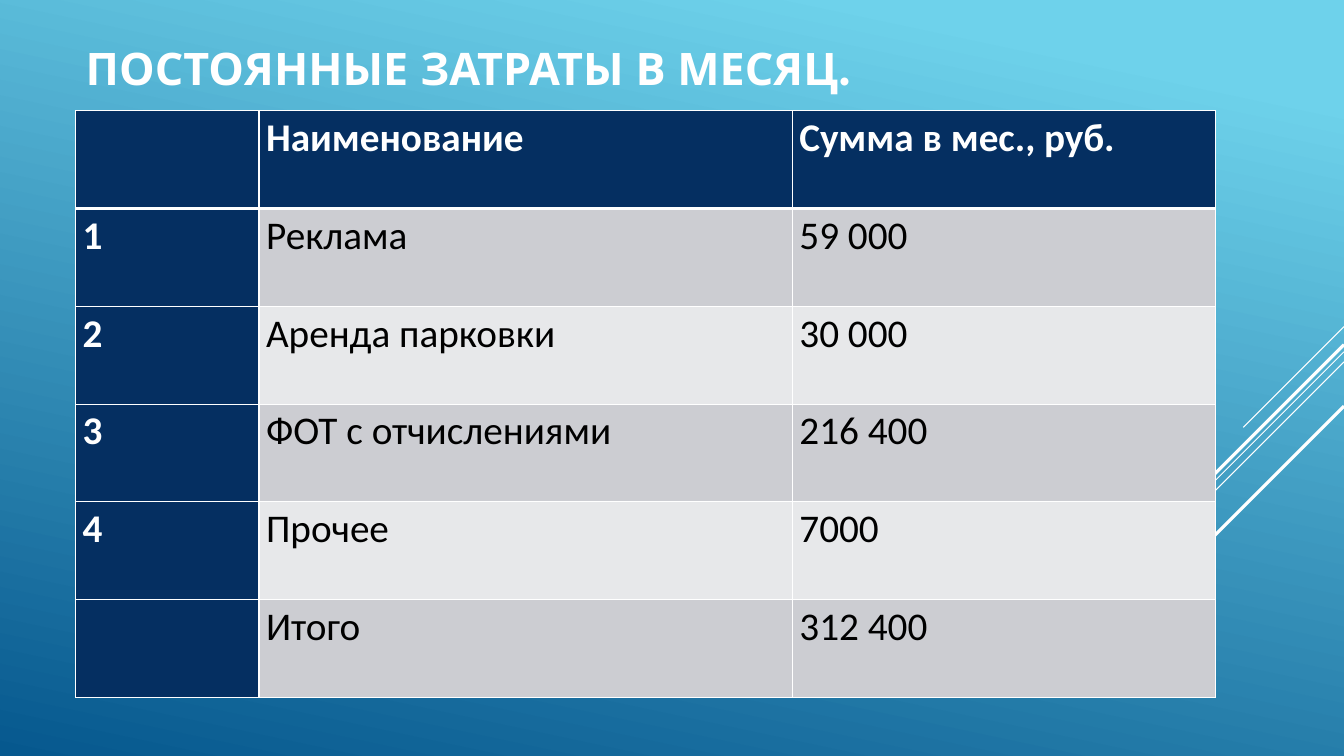
from lxml import etree
from pptx import Presentation
from pptx import util as u
from pptx.dml.color import RGBColor
from pptx.enum import shapes, text
from pptx.oxml.ns import qn

TITLE = "ПОСТОЯННЫЕ ЗАТРАТЫ В МЕСЯЦ."
COSTS = [
    ("", "Наименование", "Сумма в мес., руб."),
    ("1", "Реклама", "59 000"),
    ("2", "Аренда парковки", "30 000"),
    ("3", "ФОТ с отчислениями", "216 400"),
    ("4", "Прочее", "7000"),
    ("", "Итого", "312 400"),
]
# Diagonals at 45 degrees: height on the right edge, run to the left, width in points
DIAGONALS = [(3.24, 1, 0.75), (3.49, 3.26, 0.75), (3.59, 2.07, 0.75),
             (3.42, 1.91, 2.25), (4.03, 1.39, 2.25)]

WIDTH, HEIGHT = 13.33, 7.5
LEFT, TABLE_TOP, ROW_HEIGHT = 0.75, 1.1, 0.97
COLUMN_WIDTHS = (1.82, 5.29, 4.2)
GRADIENT_ANGLE = 258  # counter-clockwise

WHITE = RGBColor(0xFF, 0xFF, 0xFF)
BLACK = RGBColor(0, 0, 0)
NAVY = RGBColor(0x05, 0x2F, 0x61)
BANDS = (RGBColor(0xE7, 0xE8, 0xEA), RGBColor(0xCC, 0xCD, 0xD2))
SKY = RGBColor(0x6E, 0xD2, 0xEB)
DEEP_BLUE = RGBColor(0x06, 0x58, 0x8E)


def write(frame, words, *, font, size, color, bold, line_spacing=1.0, space_after=0):
    paragraph = frame.paragraphs[0]
    paragraph.alignment = text.PP_ALIGN.LEFT
    paragraph.line_spacing = line_spacing
    paragraph.space_after = u.Pt(space_after)
    run = paragraph.add_run()
    run.text = words
    run.font.name, run.font.size, run.font.bold = font, u.Pt(size), bold
    run.font.color.rgb = color


def set_borders(cell, **widths):
    """Give the cell white borders; widths in points by side: L, R, T, B."""
    properties = cell._tc.get_or_add_tcPr()
    for side, width in widths.items():
        line = etree.SubElement(properties, qn(f"a:ln{side}"), w=str(u.Pt(width)))
        fill = etree.SubElement(line, qn("a:solidFill"))
        etree.SubElement(fill, qn("a:srgbClr"), val=str(WHITE))


def paint_background(slide):
    fill = slide.background.fill
    fill.gradient()
    fill.gradient_angle = GRADIENT_ANGLE
    for stop, position, color in zip(fill.gradient_stops, (0.1, 1), (SKY, DEEP_BLUE)):
        stop.position, stop.color.rgb = position, color


def add_diagonal(slide, top, run, width):
    line = slide.shapes.add_connector(
        shapes.MSO_CONNECTOR.STRAIGHT, u.Inches(WIDTH), u.Inches(top),
        u.Inches(WIDTH - run), u.Inches(top + run))
    line.line.color.rgb = WHITE
    line.line.width = u.Pt(width)
    etree.SubElement(line._element.spPr, qn("a:effectLst"))


def place_title(slide):
    title = slide.shapes.title
    title.left, title.top = u.Inches(LEFT), u.Inches(0.09)
    title.width, title.height = u.Inches(11), u.Inches(1.17)
    frame = title.text_frame
    frame.word_wrap = True
    frame.auto_size = text.MSO_AUTO_SIZE.NONE
    frame.vertical_anchor = text.MSO_ANCHOR.MIDDLE
    write(frame, TITLE, font="League Spartan", size=32, color=WHITE, bold=True)


def add_cost_table(slide):
    table = slide.shapes.add_table(
        len(COSTS), len(COLUMN_WIDTHS), u.Inches(LEFT), u.Inches(TABLE_TOP),
        u.Inches(sum(COLUMN_WIDTHS)), u.Inches(ROW_HEIGHT * len(COSTS))).table
    for column, width in zip(table.columns, COLUMN_WIDTHS):
        column.width = u.Inches(width)
    for i, row in enumerate(COSTS):
        table.rows[i].height = u.Inches(ROW_HEIGHT)
        for j, words in enumerate(row):
            cell = table.cell(i, j)
            heading = i == 0 or j == 0
            set_borders(cell, L=1, R=1, T=3 if i == 1 else 1, B=3 if i == 0 else 1)
            cell.fill.solid()
            cell.fill.fore_color.rgb = NAVY if heading else BANDS[i % 2]
            cell.margin_left = cell.margin_right = u.Inches(0.07)
            cell.margin_top = cell.margin_bottom = 0
            if words:
                write(cell.text_frame, words, font="Calibri", size=28, bold=heading,
                      color=WHITE if heading else BLACK, line_spacing=1.07, space_after=8)


def main():
    presentation = Presentation()
    presentation.slide_width = u.Inches(WIDTH)
    presentation.slide_height = u.Inches(HEIGHT)
    slide = presentation.slides.add_slide(presentation.slide_layouts.get_by_name("Title Only"))
    paint_background(slide)
    for diagonal in DIAGONALS:
        add_diagonal(slide, *diagonal)
    place_title(slide)
    add_cost_table(slide)
    presentation.save("out.pptx")


if __name__ == "__main__":
    main()
